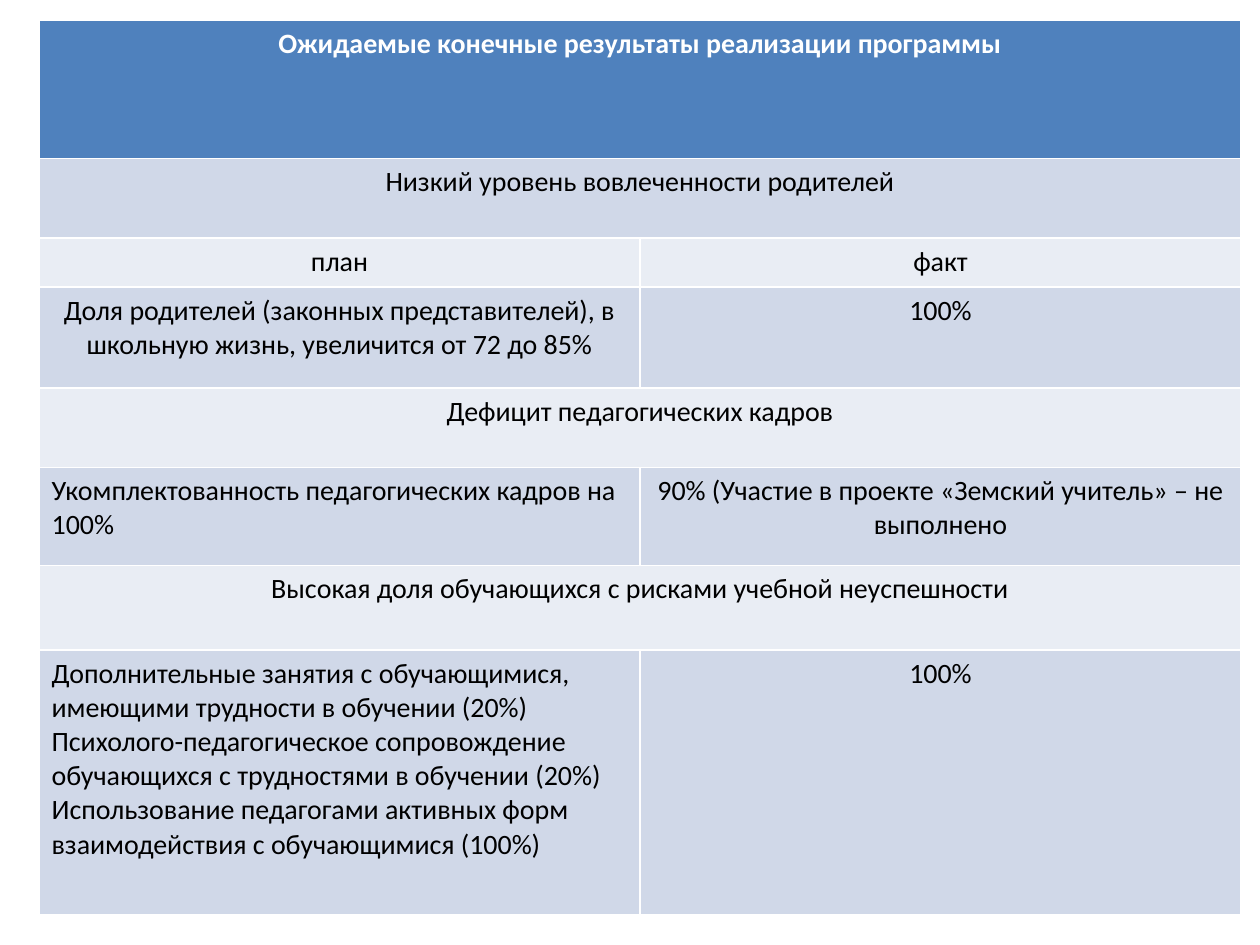
from dataclasses import dataclass

from pptx import Presentation
from pptx.dml.color import RGBColor
from pptx.enum.text import PP_ALIGN
from pptx.table import Table, _Cell
from pptx.util import Inches, Pt

CENTER = PP_ALIGN.CENTER
LEFT = PP_ALIGN.LEFT

BLANK_LAYOUT = 6
FONT = "Calibri"
HEADER_FILL = "4F81BD"
BAND_FILLS = ("E9EDF4", "D0D8E8")
WHITE = "FFFFFF"
BLACK = "000000"
COLUMN_WIDTH = 4.77


@dataclass(frozen=True)
class Entry:
    paragraphs: tuple[str, ...]
    align: PP_ALIGN = CENTER


@dataclass(frozen=True)
class ResultRow:
    """One entry spans the whole row; two entries are plan and fact."""
    height: float
    entries: tuple[Entry, ...]


ROWS = (
    ResultRow(1.1, (Entry(("Ожидаемые конечные результаты реализации программы",)),)),
    ResultRow(0.63, (Entry(("Низкий уровень вовлеченности родителей",)),)),
    ResultRow(0.39, (Entry(("план",)), Entry(("факт",)))),
    ResultRow(0.8, (
        Entry(("Доля родителей (законных представителей), в школьную жизнь, "
               "увеличится от 72 до 85%",)),
        Entry(("100%",)),
    )),
    ResultRow(0.63, (Entry(("Дефицит педагогических кадров",)),)),
    ResultRow(0.78, (
        Entry(("Укомплектованность педагогических кадров на 100%",), LEFT),
        Entry(("90% (Участие в проекте «Земский учитель» – не выполнено",)),
    )),
    ResultRow(0.67, (Entry(("Высокая доля обучающихся с рисками учебной неуспешности",)),)),
    ResultRow(2.1, (
        Entry((
            "Дополнительные занятия с обучающимися, имеющими трудности в обучении (20%)",
            "Психолого-педагогическое сопровождение обучающихся с трудностями в обучении (20%)",
            "Использование педагогами активных форм взаимодействия с обучающимися (100%)",
        ), LEFT),
        Entry(("100%",)),
    )),
)


def rgb(value: str) -> RGBColor:
    return RGBColor.from_string(value)


def write_entry(cell: _Cell, entry: Entry, is_header: bool) -> None:
    frame = cell.text_frame
    for index, text in enumerate(entry.paragraphs):
        paragraph = frame.add_paragraph() if index else frame.paragraphs[0]
        paragraph.alignment = entry.align
        run = paragraph.add_run()
        run.text = text
        run.font.name = FONT
        run.font.size = Pt(16)
        run.font.bold = is_header
        run.font.color.rgb = rgb(WHITE if is_header else BLACK)


def fill_row(table: Table, index: int, row: ResultRow) -> None:
    is_header = index == 0
    fill = HEADER_FILL if is_header else BAND_FILLS[index % 2]
    table.rows[index].height = Inches(row.height)
    cells = table.rows[index].cells
    for cell in cells:
        cell.fill.solid()
        cell.fill.fore_color.rgb = rgb(fill)
    if len(row.entries) == 1:
        table.cell(index, 0).merge(table.cell(index, 1))
    for cell, entry in zip(cells, row.entries):
        write_entry(cell, entry, is_header)


def main() -> None:
    presentation = Presentation()
    presentation.slide_width = Inches(10)
    presentation.slide_height = Inches(7.5)
    slide = presentation.slides.add_slide(presentation.slide_layouts[BLANK_LAYOUT])

    results = slide.shapes.add_table(
        len(ROWS), 2, Inches(0.31), Inches(0.16),
        Inches(2 * COLUMN_WIDTH), Inches(sum(row.height for row in ROWS)),
    ).table
    for column in results.columns:
        column.width = Inches(COLUMN_WIDTH)
    for index, row in enumerate(ROWS):
        fill_row(results, index, row)

    presentation.save("out.pptx")


if __name__ == "__main__":
    main()
